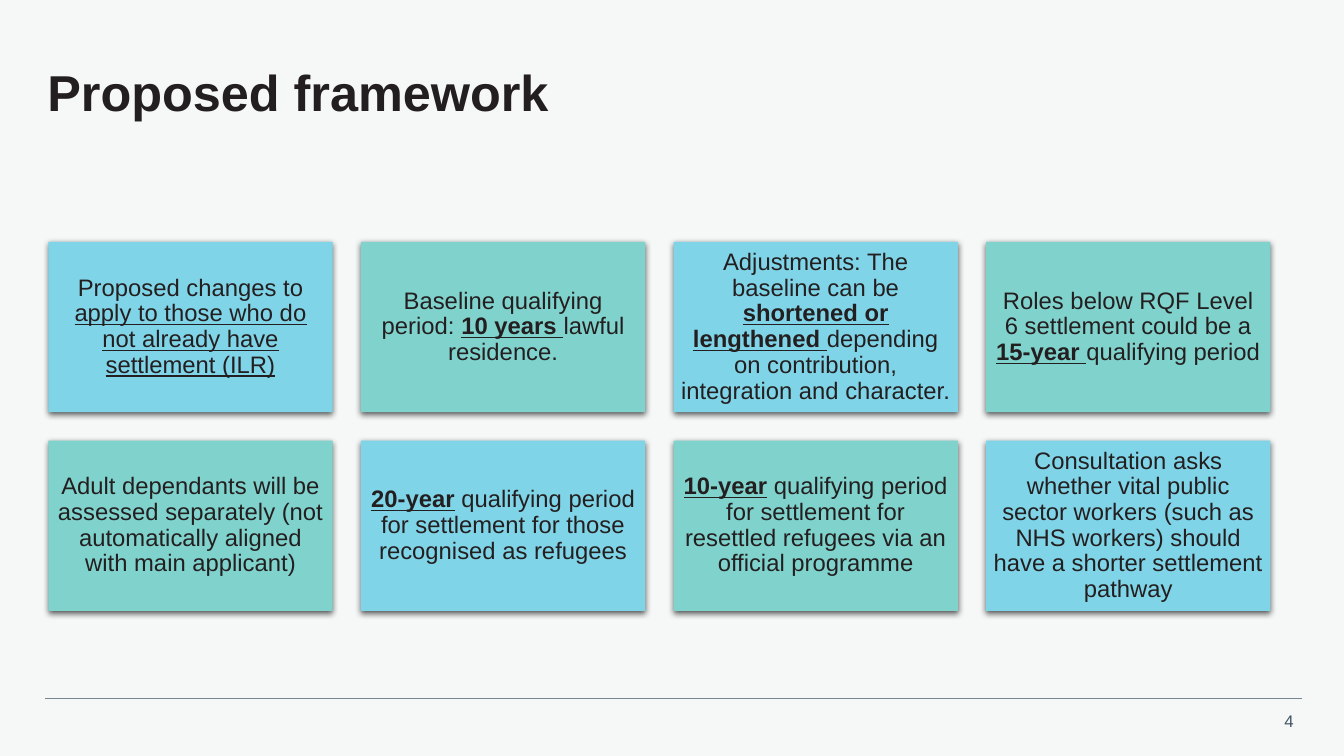
from lxml import etree
from pptx import Presentation
from pptx.dml.color import RGBColor
from pptx.enum.shapes import MSO_CONNECTOR, MSO_SHAPE
from pptx.enum.text import MSO_ANCHOR, PP_ALIGN
from pptx.oxml import parse_xml
from pptx.oxml.ns import nsdecls, qn
from pptx.util import Inches, Pt

BACKGROUND = RGBColor(0xF6, 0xF8, 0xF8)
INK = RGBColor(0x23, 0x1F, 0x20)
BLUE = RGBColor(0x80, 0xD4, 0xE7)
TEAL = RGBColor(0x80, 0xD2, 0xCC)
RULE = RGBColor(0x76, 0x86, 0x92)
SLATE = RGBColor(0x42, 0x55, 0x63)

PLAIN, UNDERLINED, STRONG = (False, False), (False, True), (True, True)
COLUMNS = 4
LEFT, TOP = 0.48, 2.4
WIDTH, HEIGHT = 2.82, 1.69
PITCH_X, PITCH_Y = 3.1, 1.97

PROPOSALS = [
    [("Proposed changes to ", PLAIN),
     ("apply to those who do not already have settlement (ILR)", UNDERLINED)],
    [("Baseline qualifying period: ", PLAIN), ("10 years ", STRONG),
     ("lawful residence.", PLAIN)],
    [("Adjustments: The baseline can be ", PLAIN),
     ("shortened or lengthened ", STRONG),
     ("depending on contribution, integration and character.", PLAIN)],
    [("Roles below RQF Level 6 settlement could be a ", PLAIN),
     ("15-year", STRONG), (" ", UNDERLINED), ("qualifying period", PLAIN)],
    [("Adult dependants will be assessed separately "
      "(not automatically aligned with main applicant)", PLAIN)],
    [("20-year", STRONG),
     (" qualifying period for settlement for those recognised as refugees", PLAIN)],
    [("10-year", STRONG),
     (" qualifying period for settlement for resettled refugees "
      "via an official programme", PLAIN)],
    [("Consultation asks whether vital public sector workers (such as NHS workers) "
      "should have a shorter settlement pathway", PLAIN)],
]


def add_run(paragraph, text, size, color, bold=False, underline=False):
    run = paragraph.add_run()
    run.text = text
    run.font.name = "Arial"
    run.font.size = Pt(size)
    run.font.color.rgb = color
    run.font.bold = bold
    run.font.underline = underline


def set_margins(frame, margin):
    frame.margin_left = frame.margin_right = Inches(margin)
    frame.margin_top = frame.margin_bottom = Inches(margin)


def add_shadow(shape):
    shape.shadow.inherit = False
    effects = shape._element.spPr.find(qn("a:effectLst"))
    effects.append(parse_xml(
        f'<a:outerShdw {nsdecls("a")} blurRad="{Pt(4.5)}" dist="{Pt(1.5)}" '
        'dir="5400000" algn="ctr" rotWithShape="0">'
        '<a:srgbClr val="000000"><a:alpha val="63000"/></a:srgbClr></a:outerShdw>'))


def set_title(slide, text):
    title = slide.shapes.title
    title.left, title.top = Inches(0.47), Inches(0.47)
    title.width, title.height = Inches(12.47), Inches(0.95)
    frame = title.text_frame
    set_margins(frame, 0)
    frame.vertical_anchor = MSO_ANCHOR.MIDDLE
    heading = frame.paragraphs[0]
    heading.alignment = PP_ALIGN.LEFT
    heading.line_spacing = 0.9
    add_run(heading, text, 36, INK, bold=True)


def add_card(slide, row, column, pieces):
    card = slide.shapes.add_shape(
        MSO_SHAPE.RECTANGLE,
        Inches(LEFT + column * PITCH_X), Inches(TOP + row * PITCH_Y),
        Inches(WIDTH), Inches(HEIGHT))
    card.fill.solid()
    card.fill.fore_color.rgb = TEAL if (row + column) % 2 else BLUE
    card.line.fill.background()
    add_shadow(card)
    frame = card.text_frame
    frame.word_wrap = True
    frame.vertical_anchor = MSO_ANCHOR.MIDDLE
    set_margins(frame, 0.07)
    proposal = frame.paragraphs[0]
    proposal.alignment = PP_ALIGN.CENTER
    proposal.line_spacing = 0.9
    for text, (bold, underline) in pieces:
        add_run(proposal, text, 17, INK, bold, underline)


def add_footer(slide, number):
    rule = slide.shapes.add_connector(
        MSO_CONNECTOR.STRAIGHT,
        Inches(0.45), Inches(6.93), Inches(12.91), Inches(6.93))
    rule.line.color.rgb = RULE
    rule.line.width = Pt(0.5)
    etree.SubElement(rule._element.spPr, qn("a:effectLst"))
    page = slide.shapes.add_textbox(
        Inches(12.52), Inches(7), Inches(0.41), Inches(0.3))
    page.text_frame.word_wrap = True
    page_line = page.text_frame.paragraphs[0]
    page_line.alignment = PP_ALIGN.RIGHT
    add_run(page_line, number, 12, SLATE)


def main():
    prs = Presentation()
    prs.slide_width, prs.slide_height = Inches(13.33), Inches(7.5)
    slide = prs.slides.add_slide(prs.slide_layouts[5])
    slide.background.fill.solid()
    slide.background.fill.fore_color.rgb = BACKGROUND
    add_footer(slide, "4")
    set_title(slide, "Proposed framework")
    for index, pieces in enumerate(PROPOSALS):
        row, column = divmod(index, COLUMNS)
        add_card(slide, row, column, pieces)
    prs.save("out.pptx")


if __name__ == "__main__":
    main()
